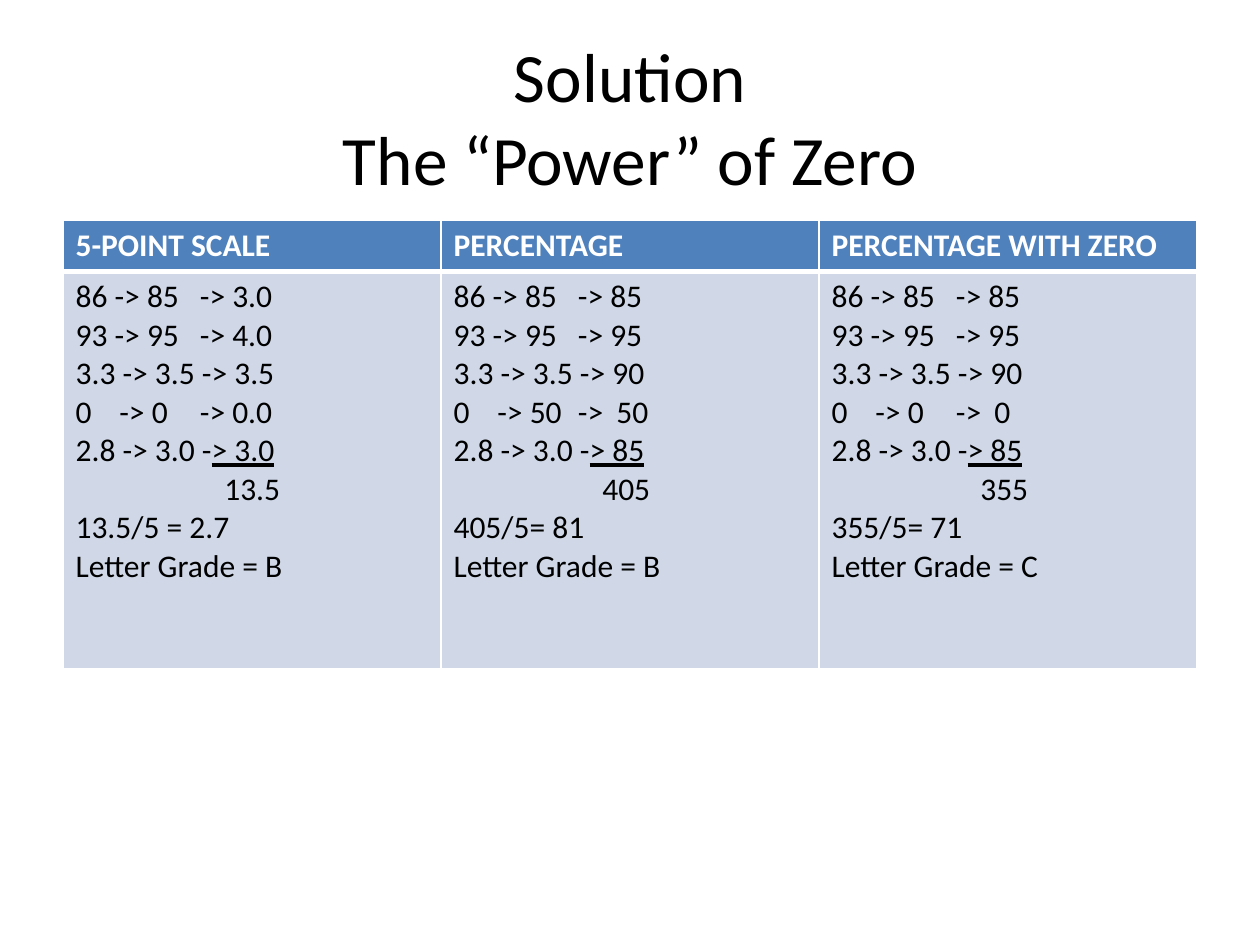
"""Build a slide that compares three ways of averaging grades."""
from pptx import Presentation
from pptx.dml.color import RGBColor
from pptx.enum.text import MSO_ANCHOR as Anchor, PP_ALIGN as Align
from pptx.oxml import parse_xml
from pptx.oxml.ns import nsdecls
from pptx.util import Pt

TITLE = "Solution\vThe “Power” of Zero"
COLUMNS = [
    ("5-POINT SCALE", ["3.0", "4.0", "3.5"], "0\t-> 0\t-> 0.0", "3.0",
     "13.5", "13.5/5 = 2.7", "B"),
    ("PERCENTAGE", ["85", "95", "90"], "0\t-> 50\t->\t50", "85",
     "405", "405/5= 81", "B"),
    ("PERCENTAGE WITH ZERO", ["85", "95", "90"], "0\t-> 0\t->\t0", "85",
     "355", "355/5= 71", "C"),
]
STEPS = ["86 -> 85\t-> ", "93 -> 95\t-> ", "3.3 -> 3.5 -> "]
LAST = "2.8 -> 3.0 -"

BLACK = RGBColor(0, 0, 0)
WHITE = RGBColor(255, 255, 255)
BLUE = RGBColor(0x4F, 0x81, 0xBD)
PALE = RGBColor(0xD0, 0xD8, 0xE8)
HEAD = {"size": Pt(18), "name": "Calibri", "bold": True}
BODY = {**HEAD, "bold": False}
SUM = Pt(85)
STOPS = [71]
ZERO = [25, 71, 93]
LEFT, TOP, WIDTH = 36, 126, 648
ROWS = [29.2, 227]


def style(font, form, color):
    for key, value in form.items():
        setattr(font, key, value)
    font.color.rgb = color


def write(para, text, form, color, under=False):
    run = para.add_run()
    run.text = text
    style(run.font, {**form, "underline": under}, color)


def set_tabs(para, stops):
    tabs = "".join(f'<a:tab pos="{Pt(stop)}" algn="l"/>' for stop in stops)
    props = para._p.get_or_add_pPr()
    props.append(parse_xml(f'<a:tabLst {nsdecls("a")}>{tabs}</a:tabLst>'))


def paint(cell, color, base):
    cell.fill.solid()
    cell.fill.fore_color.rgb = color
    widths = {"lnL": 1, "lnR": 1, "lnT": 1, "lnB": base}
    for spot, (tag, width) in enumerate(widths.items()):
        line = parse_xml(
            f'<a:{tag} {nsdecls("a")} w="{Pt(width)}"><a:solidFill>'
            f'<a:srgbClr val="{WHITE}"/></a:solidFill></a:{tag}>')
        cell._tc.get_or_add_tcPr().insert(spot, line)


def fill_body(frame, ends, zero, final, total, mean, grade):
    lines = [step + end for step, end in zip(STEPS, ends)]
    lines += [zero, LAST, total, mean, f"Letter Grade = {grade}"]
    for spot, text in enumerate(lines):
        para = frame.add_paragraph() if spot else frame.paragraphs[0]
        write(para, text, BODY, BLACK)
        if text == LAST:
            write(para, f"> {final}", BODY, BLACK, True)
        elif text == total:
            para._p.get_or_add_pPr().set("marL", str(SUM))
        elif "\t" in text:
            set_tabs(para, ZERO if text == zero else STOPS)


def main():
    deck = Presentation()
    deck.slide_width, deck.slide_height = Pt(720), Pt(540)
    slide = deck.slides.add_slide(deck.slide_layouts[5])

    title = slide.shapes.title
    place = {"left": 36, "top": 21.6, "width": 648, "height": 90}
    for key, value in place.items():
        setattr(title, key, Pt(value))
    title.text_frame.text = TITLE
    title.text_frame.vertical_anchor = Anchor.MIDDLE
    para = title.text_frame.paragraphs[0]
    para.alignment = Align.CENTER
    for run in para.runs:
        style(run.font, {"size": Pt(39.6), "name": "Calibri"}, BLACK)

    table = slide.shapes.add_table(
        len(ROWS), len(COLUMNS), Pt(LEFT), Pt(TOP), Pt(WIDTH),
        Pt(sum(ROWS))).table
    table.horz_banding = False
    for row, height in zip(table.rows, ROWS):
        row.height = Pt(height)
    for col, (head, *rest) in enumerate(COLUMNS):
        table.columns[col].width = Pt(WIDTH / len(COLUMNS))
        top, body = table.cell(0, col), table.cell(1, col)
        paint(top, BLUE, 3)
        paint(body, PALE, 1)
        write(top.text_frame.paragraphs[0], head, HEAD, WHITE)
        fill_body(body.text_frame, *rest)
    deck.save("out.pptx")


if __name__ == "__main__":
    main()
